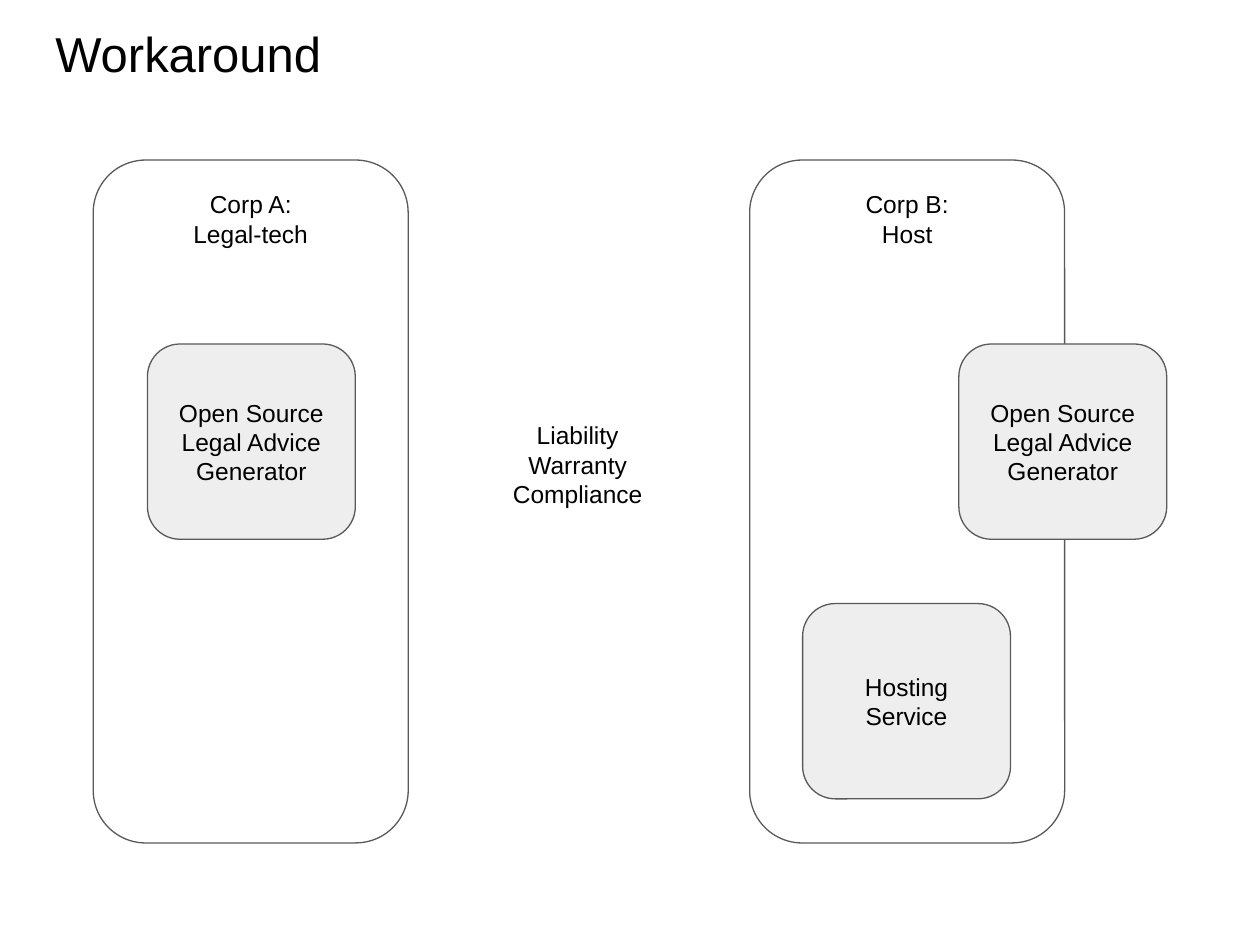
from pptx import Presentation
from pptx.dml.color import RGBColor
from pptx.enum.shapes import MSO_SHAPE
from pptx.enum.text import MSO_ANCHOR, PP_ALIGN
from pptx.util import Inches, Pt

PANEL_TOP, PANEL_WIDTH, PANEL_HEIGHT = 1.27, 2.5, 5.42
LABEL_TOP, LABEL_HEIGHT = 1.38, 0.71
MODULE_WIDTH, MODULE_HEIGHT = 1.65, 1.55
GENERATOR_TOP, HOSTING_TOP = 2.73, 4.79


def color(hex_code):
    return RGBColor.from_string(hex_code)


def write(frame, lines, size=14, align=PP_ALIGN.CENTER, anchor=MSO_ANCHOR.MIDDLE):
    frame.text = "\n".join(lines)
    frame.word_wrap = True
    frame.vertical_anchor = anchor
    frame.margin_left = frame.margin_right = Inches(0.1)
    frame.margin_top = frame.margin_bottom = Inches(0.1)
    for paragraph in frame.paragraphs:
        paragraph.alignment = align
        for run in paragraph.runs:
            run.font.size = Pt(size)
            run.font.name = "Arial"
            run.font.color.rgb = color("000000")


def add_label(shapes, box, lines):
    label = shapes.add_textbox(*map(Inches, box))
    write(label.text_frame, lines)


def add_rounded(shapes, box, fill=None):
    rounded = shapes.add_shape(MSO_SHAPE.ROUNDED_RECTANGLE, *map(Inches, box))
    rounded.shadow.inherit = False
    rounded.line.color.rgb = color("595959")
    rounded.line.width = Pt(0.75)
    if fill:
        rounded.fill.solid()
        rounded.fill.fore_color.rgb = color(fill)
    else:
        rounded.fill.background()
    return rounded


def add_corporation(slide, left, label_width, name, modules):
    """Group a panel, its centred name and its modules, each (left, top, lines)."""
    shapes = slide.shapes.add_group_shape().shapes
    add_rounded(shapes, (left, PANEL_TOP, PANEL_WIDTH, PANEL_HEIGHT))
    label_left = left + (PANEL_WIDTH - label_width) / 2
    add_label(shapes, (label_left, LABEL_TOP, label_width, LABEL_HEIGHT), name)
    for module_left, top, lines in modules:
        module = add_rounded(
            shapes, (module_left, top, MODULE_WIDTH, MODULE_HEIGHT), "EEEEEE")
        write(module.text_frame, lines)


def add_title(slide, text):
    title = slide.shapes.title
    title.left, title.top, title.width, title.height = map(
        Inches, (0.34, 0.09, 9.32, 0.84))
    write(title.text_frame, [text], 28, PP_ALIGN.LEFT, MSO_ANCHOR.TOP)


def main():
    prs = Presentation()
    prs.slide_width, prs.slide_height = Inches(10), Inches(7.5)
    slide = prs.slides.add_slide(prs.slide_layouts[5])
    add_title(slide, "Workaround")
    add_corporation(slide, 0.74, 1.14, ["Corp A: Legal-tech"], [
        (1.17, GENERATOR_TOP, ["Open Source", "Legal Advice Generator"]),
    ])
    add_label(slide.shapes, (3.41, 2.87, 2.35, 1.63),
              ["Liability", "Warranty", "Compliance"])
    add_corporation(slide, 5.95, 1.28, ["Corp B:", "Host"], [
        (7.61, GENERATOR_TOP, ["Open Source Legal Advice Generator"]),
        (6.37, HOSTING_TOP, ["Hosting Service"]),
    ])
    prs.save("out.pptx")


if __name__ == "__main__":
    main()
